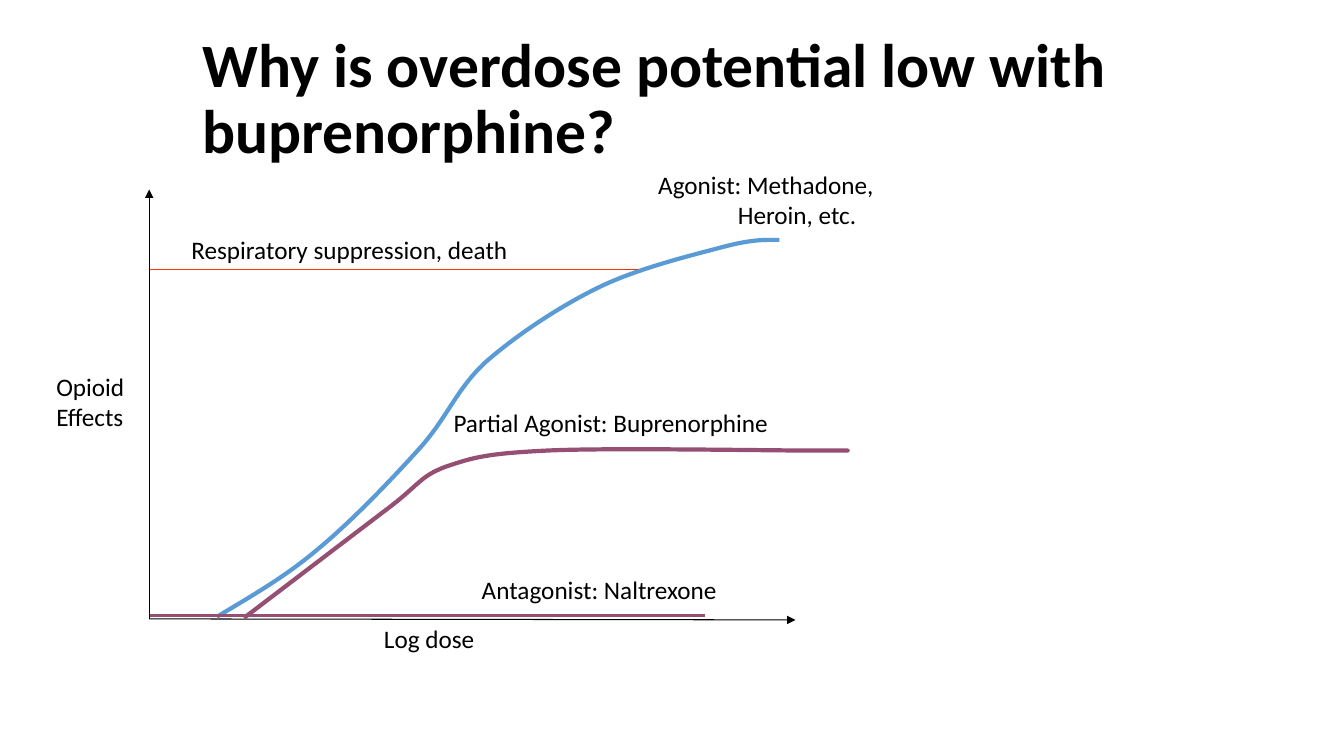
from dataclasses import dataclass

import pptx
import pptx.dml.color
import pptx.enum.shapes
import pptx.enum.text
import pptx.oxml
import pptx.oxml.ns
import pptx.util
from pptx.util import Inches


@dataclass(frozen=True)
class Theme:
    font: str = "Calibri"
    ink: str = "000000"
    agonist: str = "5B9BD5"
    antagonist: str = "954F72"
    danger: str = "FF3300"
    title_size: int = 44
    label_size: int = 18
    thin: float = 0.75
    medium: float = 2.25
    thick: float = 3


@dataclass(frozen=True)
class Box:
    left: float
    top: float
    width: float
    height: float

    def point(self, x, y):
        return Inches(self.left + x), Inches(self.top + y)


THEME = Theme()

LABELS = [
    ("Opioid\nEffects", -1.02, 1.75, 0.88, 0),
    ("Log dose", 2.23, 4.25, 1.11, 0),
    ("Antagonist: Naltrexone", 3.2, 3.77, 2.56, 0),
    ("Partial Agonist: Buprenorphine", 2.92, 2.11, 3.36, 0),
    ("Respiratory suppression, death", 0.32, 0.4, 3.37, 0),
    ("Agonist: Methadone,\nHeroin, etc.", 4.95, -0.25, 2.36, 0.79),
]

AGONIST_CURVE = [
    (0.67, 4.24),
    (1, 4.04), (1.34, 3.85), (1.67, 3.57),
    (2.01, 3.29), (2.4, 2.88), (2.68, 2.57),
    (2.96, 2.26), (3.05, 1.97), (3.35, 1.7),
    (3.65, 1.44), (4.07, 1.16), (4.46, 0.97),
    (4.85, 0.78), (5.39, 0.65), (5.69, 0.57),
    (5.99, 0.49), (6.12, 0.5), (6.25, 0.5),
]

PARTIAL_AGONIST_CURVE = [
    (0.94, 4.25),
    (1.48, 3.84), (2.03, 3.42), (2.36, 3.17),
    (2.69, 2.92), (2.68, 2.85), (2.94, 2.75),
    (3.21, 2.66), (3.33, 2.62), (3.94, 2.59),
    (4.55, 2.56), (6.14, 2.59), (6.61, 2.59),
    (7.08, 2.59), (6.93, 2.59), (6.78, 2.59),
]


def format_runs(paragraph, size, bold=False):
    for run in paragraph.runs:
        run.font.name = THEME.font
        run.font.size = pptx.util.Pt(size)
        run.font.bold = bold
        run.font.color.rgb = pptx.dml.color.RGBColor.from_string(THEME.ink)


def style_line(line, color, width):
    line.color.rgb = pptx.dml.color.RGBColor.from_string(color)
    line.width = pptx.util.Pt(width)


def add_label(slide, box, text, x, y, width, last_indent):
    height = 0.1 + 0.3 * len(text.split("\n"))
    shape = slide.shapes.add_textbox(*box.point(x, y), Inches(width), Inches(height))
    frame = shape.text_frame
    frame.text = text
    frame.word_wrap = False
    frame.auto_size = pptx.enum.text.MSO_AUTO_SIZE.SHAPE_TO_FIT_TEXT
    for paragraph in frame.paragraphs:
        format_runs(paragraph, THEME.label_size)
    if last_indent:
        properties = frame.paragraphs[-1]._p.get_or_add_pPr()
        properties.set("marL", str(Inches(last_indent)))


def add_line(slide, box, start, end, color, width, arrow=False):
    connector = slide.shapes.add_connector(
        pptx.enum.shapes.MSO_CONNECTOR.STRAIGHT, *box.point(*start), *box.point(*end)
    )
    style_line(connector.line, color, width)
    if arrow:
        tail = pptx.oxml.ns.qn("a:tailEnd")
        connector.line._get_or_add_ln().append(
            connector._element.makeelement(tail, {"type": "triangle"})
        )
    effects = pptx.oxml.ns.qn("a:effectLst")
    connector._element.spPr.append(connector._element.makeelement(effects, {}))


def add_curve(slide, box, points, color):
    start, *others = [box.point(*point) for point in points]
    builder = slide.shapes.build_freeform(*start)
    builder.add_line_segments(others, close=False)
    shape = builder.convert_to_shape()
    shape.shadow.inherit = False
    shape.fill.background()
    style_line(shape.line, color, THEME.thick)
    segments = list(shape._element.iter(pptx.oxml.ns.qn("a:lnTo")))
    outline = segments[0].getparent()
    for first in range(0, len(segments), 3):
        bezier = outline.makeelement(pptx.oxml.ns.qn("a:cubicBezTo"), {})
        outline.append(bezier)
        for segment in segments[first:first + 3]:
            bezier.append(segment[0])
            outline.remove(segment)


def add_title(slide, box):
    shape = slide.shapes.add_textbox(
        *box.point(0, 0), Inches(box.width), Inches(box.height)
    )
    frame = shape.text_frame
    frame.word_wrap = True
    frame.text = "Why is overdose potential low with buprenorphine?"
    frame.paragraphs[0].line_spacing = 0.9
    format_runs(frame.paragraphs[0], THEME.title_size, bold=True)


def add_dose_plot(slide, box):
    bottom = box.height
    add_line(slide, box, (0, bottom), (0, 0), THEME.ink, THEME.thin, arrow=True)
    add_line(slide, box, (0, bottom), (box.width, bottom + 0.01),
             THEME.ink, THEME.thin, arrow=True)
    add_curve(slide, box, AGONIST_CURVE, THEME.agonist)
    add_line(slide, box, (0.01, 0.79), (4.85, 0.79), THEME.danger, THEME.thin)
    add_curve(slide, box, PARTIAL_AGONIST_CURVE, THEME.antagonist)
    add_line(slide, box, (0.01, 4.23), (5.51, 4.23), THEME.antagonist, THEME.medium)
    for label in LABELS:
        add_label(slide, box, *label)


def main():
    presentation = pptx.Presentation()
    presentation.slide_width = Inches(13.33)
    presentation.slide_height = Inches(7.5)
    slide = presentation.slides.add_slide(presentation.slide_layouts[6])
    add_title(slide, Box(1.91, 0.29, 9.43, 0.89))
    add_dose_plot(slide, Box(1.48, 1.88, 6.41, 4.26))
    presentation.save("out.pptx")


if __name__ == "__main__":
    main()
